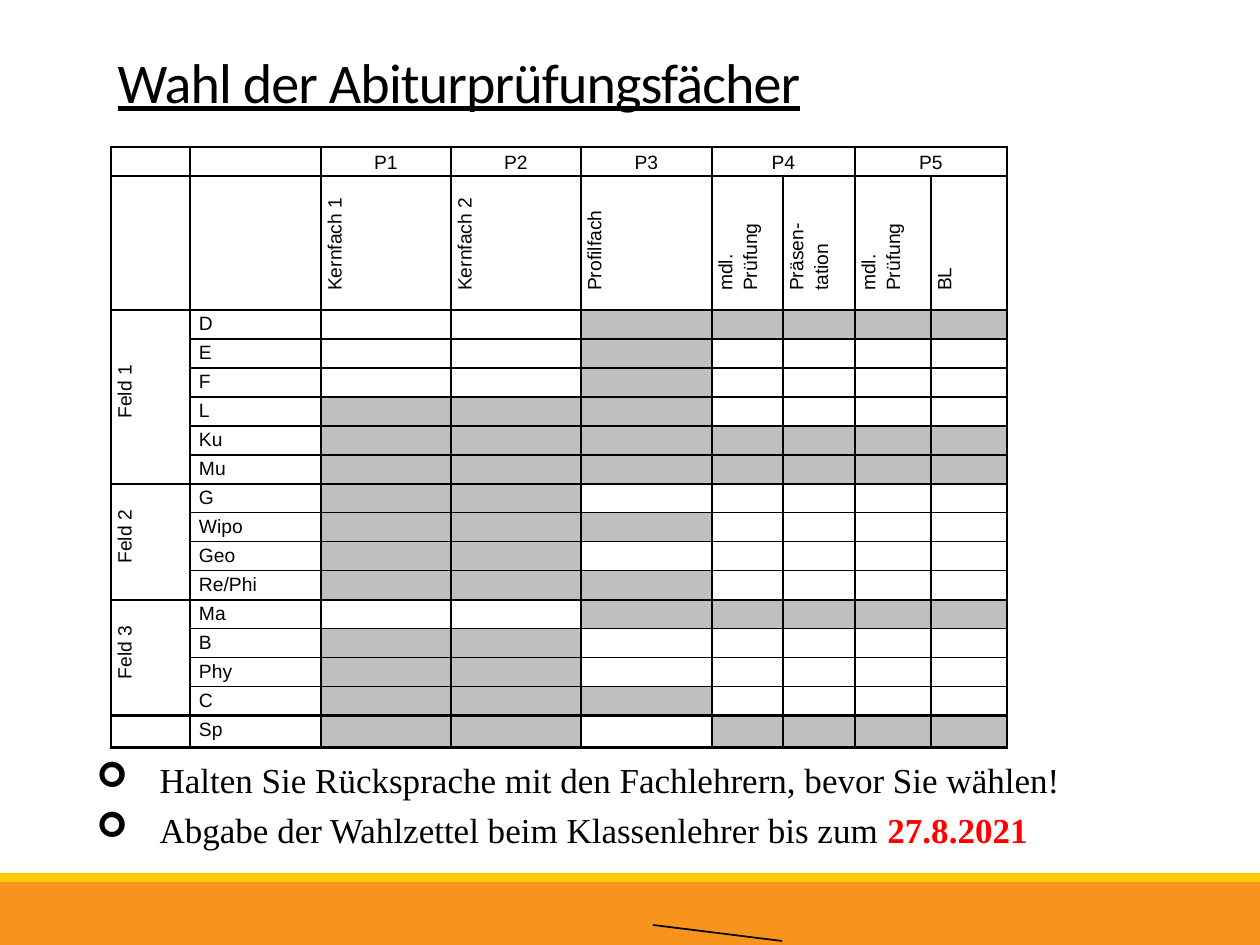
from lxml.etree import SubElement
from pptx import Presentation
from pptx.dml.color import RGBColor
from pptx.enum.shapes import MSO_CONNECTOR, MSO_SHAPE
from pptx.enum.text import MSO_ANCHOR, MSO_AUTO_SIZE, PP_ALIGN
from pptx.oxml.ns import qn
from pptx.util import Emu, Pt

C = {"black": "000000", "white": "FFFFFF", "gray": "BFBFBF", "red": "FF0000",
     "orange": "F8931D", "yellow": "FFCA08"}


def px(n):
    return Emu(round(n * 914400 / 126))


def style(font, color="black", **values):
    font.color.rgb = RGBColor.from_string(C[color])
    for key, value in values.items():
        setattr(font, key, value)


prs = Presentation()
prs.slide_width, prs.slide_height = px(1260), px(945)
s = prs.slides.add_slide(prs.slide_layouts[1])
title, body = s.shapes.title, s.placeholders[1]
for sp, box in ((title, (105, 37, 811, 84)), (body, (84, 752, 1055, 106))):
    sp.left, sp.top, sp.width, sp.height = map(px, box)

# Bands at the foot
for color, top, height in (("orange", 882, 63), ("yellow", 873, 9)):
    sp = s.shapes.add_shape(MSO_SHAPE.RECTANGLE, 0, px(top), px(1260), px(height))
    sp.shadow.inherit = False
    sp.fill.solid()
    sp.fill.fore_color.rgb = RGBColor.from_string(C[color])
    sp.line.fill.background()

# Title
tf = title.text_frame
tf.auto_size = MSO_AUTO_SIZE.NONE
tf.vertical_anchor = MSO_ANCHOR.BOTTOM
p = tf.paragraphs[0]
p.alignment, p.line_spacing = PP_ALIGN.LEFT, 0.85
r = p.add_run()
r.text = "Wahl der Abiturprüfungsfächer"
style(r.font, name="Calibri", size=Pt(32), underline=True)
r.font._element.set("spc", "-50")

# Notes list
notes = [
    [("Halten Sie Rücksprache mit den Fachlehrern, bevor Sie wählen!", "black")],
    [("Abgabe der Wahlzettel beim Klassenlehrer bis zum ", "black"), ("27.8.2021", "red")],
]
tf = body.text_frame
tf.auto_size = MSO_AUTO_SIZE.SHAPE_TO_FIT_TEXT
for i, runs in enumerate(notes):
    p = tf.add_paragraph() if i else tf.paragraphs[0]
    p.space_before = Pt(4.6)
    pPr = p._p.get_or_add_pPr()
    pPr.set("marL", str(px(63)))
    pPr.set("indent", str(px(-63)))
    SubElement(pPr, qn("a:buFont"), typeface="Wingdings")
    SubElement(pPr, qn("a:buChar"), char="➢")
    for text, color in runs:
        r = p.add_run()
        r.text = text
        style(r.font, color, name="Times New Roman", size=Pt(20), bold=color == "red")

# Table content: 1 marks a grayed-out choice
subjects = [
    ("D", "0011111"), ("E", "0010000"), ("F", "0010000"), ("L", "1110000"),
    ("Ku", "1111111"), ("Mu", "1111111"), ("G", "1100000"), ("Wipo", "1110000"),
    ("Geo", "1100000"), ("Re/Phi", "1110000"), ("Ma", "0011111"), ("B", "1100000"),
    ("Phy", "1100000"), ("C", "1110000"), ("Sp", "1101111"),
]
fields = {2: "Feld 1", 8: "Feld 2", 12: "Feld 3"}
rows = [
    ["", "", "P1", "P2", "P3", "P4", "", "P5", ""],
    ["", "", "Kernfach 1", "Kernfach 2", "Profilfach", "mdl. Prüfung",
     "Präsen-tation", "mdl. Prüfung", "BL"],
]
rows += [[fields.get(i, ""), name] + [""] * 7 for i, (name, _) in enumerate(subjects, 2)]
widths = [79, 131, 130, 130, 131, 71, 72, 76, 76]
heights = [29, 134] + [29] * 14 + [32]
heavy_cols, heavy_rows = {0, 2, 7, 9}, {0, 2, 8, 12, 16, 17}

frame = s.shapes.add_table(len(rows), len(widths), px(111), px(147),
                           px(sum(widths)), px(sum(heights)))
table = frame.table
for col, width in zip(table.columns, widths):
    col.width = px(width)
for row, height in zip(table.rows, heights):
    row.height = px(height)
for top, left, bottom, right in ((0, 5, 0, 6), (0, 7, 0, 8), (2, 0, 7, 0),
                                 (8, 0, 11, 0), (12, 0, 15, 0)):
    table.cell(top, left).merge(table.cell(bottom, right))

# Table cells
for i, texts in enumerate(rows):
    for j, text in enumerate(texts):
        cell = table.cell(i, j)
        cell.margin_left = cell.margin_right = px(9)
        cell.margin_top = cell.margin_bottom = 0
        subject = i > 1 and j == 1
        cell.vertical_anchor = MSO_ANCHOR.TOP if subject else MSO_ANCHOR.MIDDLE
        p = cell.text_frame.paragraphs[0]
        p.line_spacing, p.space_before = 1.15, Pt(2.2)
        p.alignment = (PP_ALIGN.JUSTIFY if subject else
                       PP_ALIGN.LEFT if i == 1 else PP_ALIGN.CENTER)
        tcPr = cell._tc.get_or_add_tcPr()
        if text:
            r = p.add_run()
            r.text = text
            style(r.font, name="Arial", size=Pt(11))
            if i == 1 or j == 0:
                tcPr.set("vert", "vert270")
                p._p.get_or_add_pPr().set("marL", str(px(10)))
        else:
            SubElement(p._p, qn("a:endParaRPr"), sz="1100")

        if not cell.is_spanned:
            end_row = i + (cell.span_height if cell.is_merge_origin else 1)
            end_col = j + (cell.span_width if cell.is_merge_origin else 1)
            for side, heavy in (("L", j in heavy_cols), ("R", end_col in heavy_cols),
                                ("T", i in heavy_rows), ("B", end_row in heavy_rows)):
                ln = SubElement(tcPr, qn("a:ln" + side), w=str(Pt(1.5 if heavy else 1)))
                SubElement(SubElement(ln, qn("a:solidFill")), qn("a:srgbClr"), val=C["black"])
        gray = i > 1 and j > 1 and subjects[i - 2][1][j - 2] == "1"
        cell.fill.solid()
        cell.fill.fore_color.rgb = RGBColor.from_string(C["gray" if gray else "white"])

# Short slanted line
line = s.shapes.add_connector(MSO_CONNECTOR.STRAIGHT, px(653), px(925), px(782), px(941))
line.line.color.rgb = RGBColor.from_string(C["black"])
line.line.width = Pt(1)
SubElement(line._element.spPr, qn("a:effectLst"))

prs.save("out.pptx")
